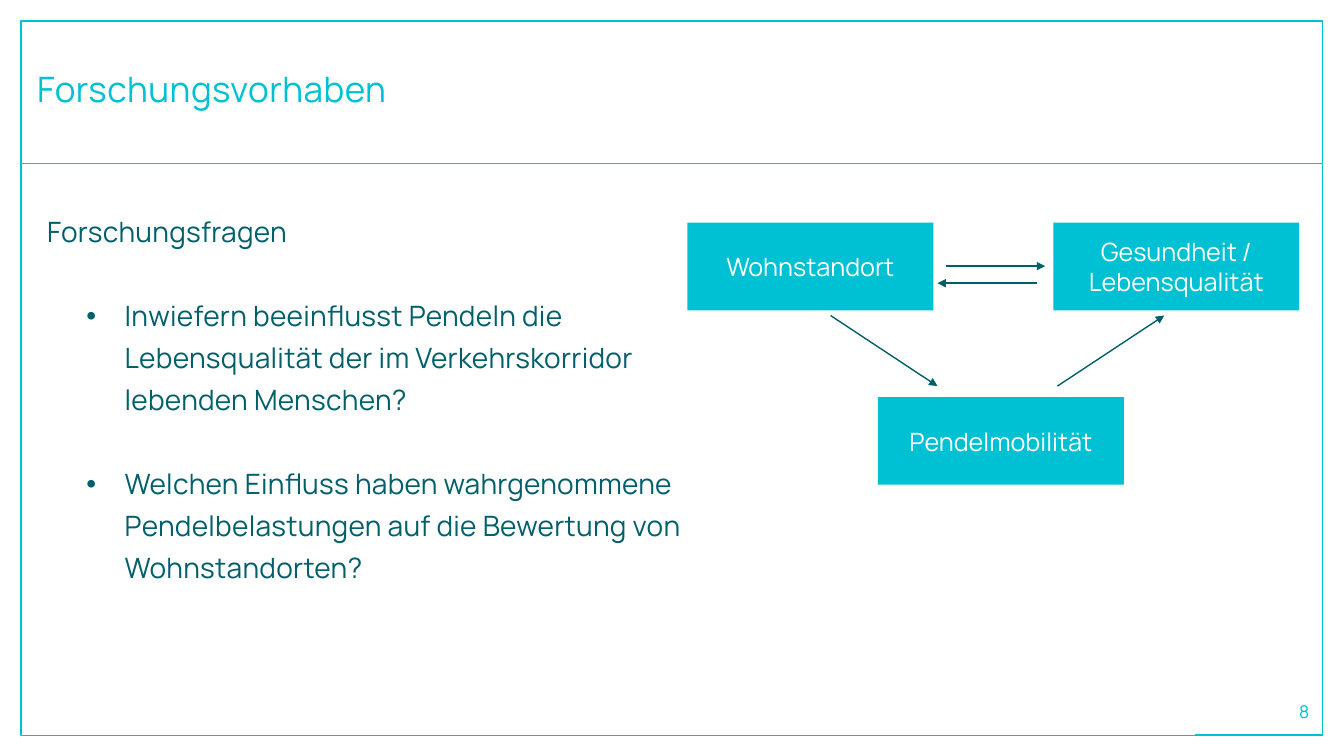
"""Build the slide on the research project and its questions."""
from dataclasses import dataclass

from lxml import etree
from pptx import Presentation
from pptx.dml.color import RGBColor
from pptx.enum import shapes, text
from pptx.oxml import ns
from pptx.util import Pt


@dataclass(frozen=True)
class Theme:
    """Colours, font and type sizes of the slide."""
    accent: RGBColor = RGBColor(0x00, 0xC1, 0xD4)
    dark: RGBColor = RGBColor(0x00, 0x60, 0x6A)
    white: RGBColor = RGBColor(0xFF, 0xFF, 0xFF)
    font: str = "Manrope"
    title: float = 25
    body: float = 20
    label: float = 18
    number: float = 12.5


THEME = Theme()
BOX_WIDTH, BOX_HEIGHT = 175.7, 62.6
QUESTIONS = (
    "Inwiefern beeinflusst Pendeln die Lebensqualität der im Verkehrskorridor lebenden Menschen?",
    "Welchen Einfluss haben wahrgenommene Pendelbelastungen auf die Bewertung von Wohnstandorten?",
)
BOXES = (
    ("Wohnstandort", 491, 159.1),
    ("Gesundheit / Lebensqualität", 752.4, 159.1),
    ("Pendelmobilität", 627.1, 283.7),
)
ARROWS = (
    ((755.3, 275.8), (831.6, 225.4)),
    ((593.3, 225.4), (669.6, 275.8)),
    ((675.4, 190.1), (746.6, 190.1)),
    ((740.9, 202.3), (669.6, 202.3)),
)


def add_run(paragraph, wording, size, color, spacing=0):
    """Add a run with its font and letter spacing in points."""
    run = paragraph.add_run()
    run.text = wording
    run.font.name = THEME.font
    run.font.size = Pt(size)
    run.font.color.rgb = color
    if spacing:
        run._r.get_or_add_rPr().set("spc", str(round(spacing * 100)))


def set_frame(shape, anchor, margins=(7.2, 3.6, 7.2, 3.6)):
    """Set wrapping, anchor and margins, and return the text frame."""
    frame = shape.text_frame
    frame.word_wrap = True
    frame.auto_size = text.MSO_AUTO_SIZE.NONE
    frame.vertical_anchor = anchor
    (frame.margin_left, frame.margin_top,
     frame.margin_right, frame.margin_bottom) = map(Pt, margins)
    return frame


def add_rectangle(slide, left, top, width, height):
    """Add a rectangle without a shadow."""
    shape = slide.shapes.add_shape(
        shapes.MSO_SHAPE.RECTANGLE, Pt(left), Pt(top), Pt(width), Pt(height))
    shape.shadow.inherit = False
    return shape


def add_line(slide, start, end, color, arrow=False):
    """Add a straight line, with an arrowhead at its end if wanted."""
    line = slide.shapes.add_connector(
        shapes.MSO_CONNECTOR.STRAIGHT, *map(Pt, (*start, *end)))
    line.line.color.rgb = color
    line.line.width = Pt(1)
    if arrow:
        etree.SubElement(line.line._get_or_add_ln(), ns.qn("a:tailEnd"), type="triangle")
    etree.SubElement(line._element.spPr, ns.qn("a:effectLst"))


def add_frame(slide):
    """Draw the border and the rules of the slide."""
    border = add_rectangle(slide, 15.1, 15.1, 929.5, 510.5)
    border.fill.background()
    border.line.color.rgb = THEME.accent
    border.line.width = Pt(1)
    add_line(slide, (15.1, 116.6), (944.6, 116.6), THEME.accent)
    add_line(slide, (853.9, 524.9), (944.6, 524.9), THEME.accent)


def add_number(slide, wording):
    """Add the page number."""
    shape = slide.shapes.add_textbox(Pt(865.4), Pt(491), Pt(69.8), Pt(33.8))
    paragraph = set_frame(shape, text.MSO_ANCHOR.MIDDLE, (0, 0, 0, 0)).paragraphs[0]
    paragraph.alignment = text.PP_ALIGN.RIGHT
    add_run(paragraph, wording, THEME.number, THEME.accent)


def set_title(slide, wording):
    """Place and fill the title."""
    title = slide.shapes.title
    title.left, title.top, title.width, title.height = map(Pt, (26.6, 28.1, 680.4, 73.4))
    paragraph = set_frame(title, text.MSO_ANCHOR.MIDDLE, (0, 0, 0, 2.9)).paragraphs[0]
    paragraph.alignment = text.PP_ALIGN.LEFT
    add_run(paragraph, wording, THEME.title, THEME.accent, 0.4)


def add_bullet(paragraph):
    """Give a paragraph a hanging bullet."""
    properties = paragraph._p.get_or_add_pPr()
    properties.set("marL", str(Pt(55.4)))
    properties.set("indent", str(Pt(-27.4)))
    color = etree.SubElement(properties, ns.qn("a:buClr"))
    etree.SubElement(color, ns.qn("a:srgbClr"), val=str(THEME.dark))
    etree.SubElement(properties, ns.qn("a:buFont"), typeface="Arial")
    etree.SubElement(properties, ns.qn("a:buChar"), char="•")


def add_questions(slide, heading, questions):
    """Add the heading and the bulleted research questions."""
    shape = slide.shapes.add_textbox(Pt(26.6), Pt(144), Pt(481.7), Pt(342.7))
    frame = set_frame(shape, text.MSO_ANCHOR.TOP)
    first = frame.paragraphs[0]
    first.line_spacing = 1.25
    add_run(first, heading, THEME.body, THEME.dark, 0.2)
    for question in questions:
        paragraph = frame.add_paragraph()
        paragraph.line_spacing = 1.25
        paragraph.space_before = Pt(30)
        add_bullet(paragraph)
        add_run(paragraph, question, THEME.body, THEME.dark, 0.2)


def add_box(slide, label, left, top):
    """Add a filled box of the diagram."""
    box = add_rectangle(slide, left, top, BOX_WIDTH, BOX_HEIGHT)
    box.fill.solid()
    box.fill.fore_color.rgb = THEME.accent
    box.line.fill.background()
    paragraph = set_frame(box, text.MSO_ANCHOR.MIDDLE).paragraphs[0]
    paragraph.alignment = text.PP_ALIGN.CENTER
    add_run(paragraph, label, THEME.label, THEME.white)


def main():
    """Build and save the presentation."""
    presentation = Presentation()
    presentation.slide_width, presentation.slide_height = Pt(960), Pt(540)
    slide = presentation.slides.add_slide(presentation.slide_layouts[5])
    add_frame(slide)
    add_number(slide, "8")
    set_title(slide, "Forschungsvorhaben")
    add_questions(slide, "Forschungsfragen", QUESTIONS)
    for label, left, top in BOXES:
        add_box(slide, label, left, top)
    for start, end in ARROWS:
        add_line(slide, start, end, THEME.dark, arrow=True)
    presentation.save("out.pptx")


if __name__ == "__main__":
    main()
